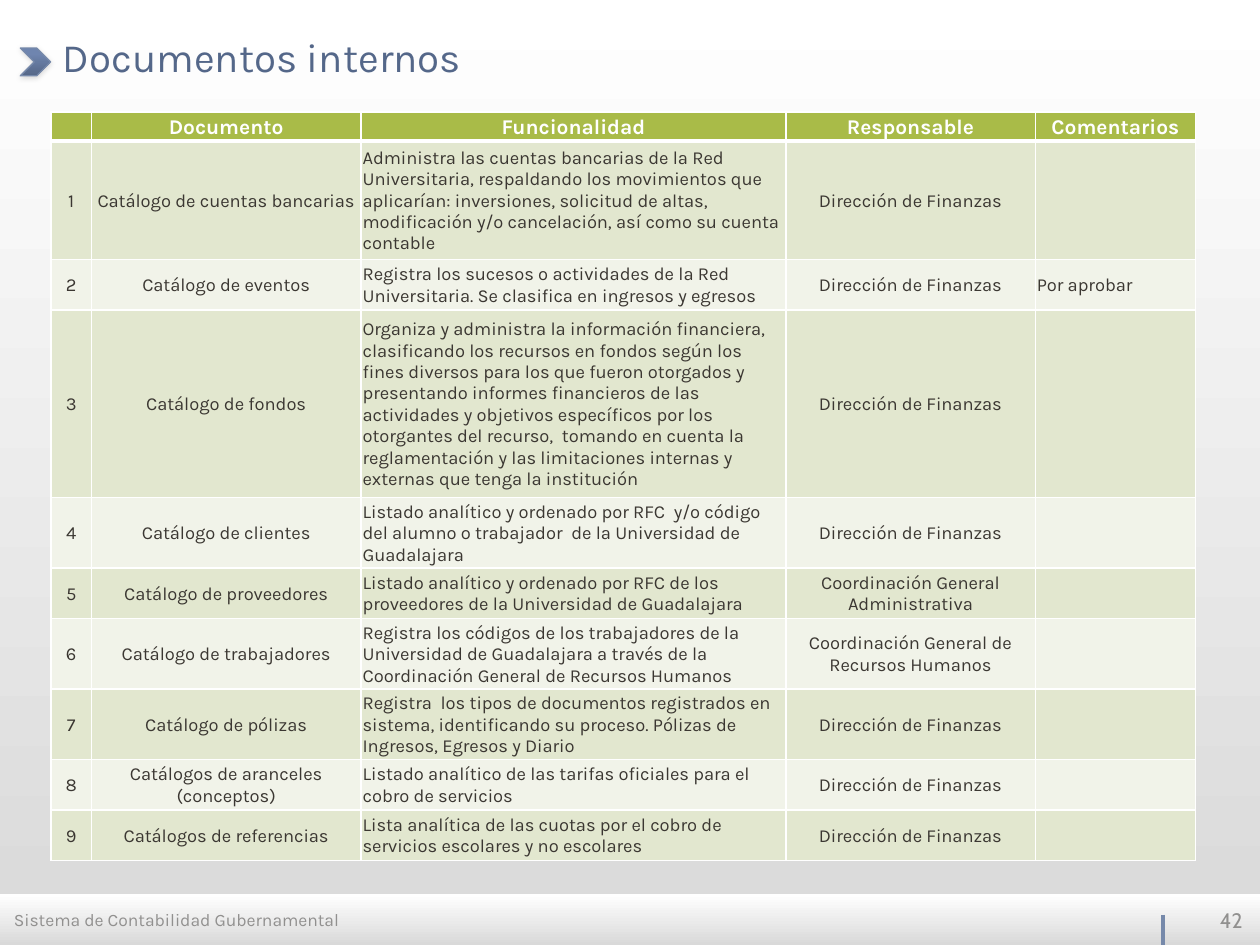
from lxml.etree import SubElement
from pptx import Presentation
from pptx.dml.color import RGBColor
from pptx.enum.shapes import MSO_CONNECTOR, MSO_SHAPE
from pptx.enum.text import MSO_ANCHOR, PP_ALIGN
from pptx.oxml.ns import qn
from pptx.util import Cm, Pt

WHITE = RGBColor(0xFF, 0xFF, 0xFF)
SILVER = RGBColor(0xD9, 0xD9, 0xD9)
GRAY = RGBColor(0x91, 0x90, 0x8F)
TITLE_BLUE = RGBColor(0x54, 0x67, 0x89)
LINE_BLUE = RGBColor(0x76, 0x89, 0xAA)
DARK_BLUE = RGBColor(0x55, 0x67, 0x87)
LIGHT_BLUE = RGBColor(0x6F, 0x85, 0xAF)
GREEN = RGBColor(0xA9, 0xBB, 0x48)
BANDS = [RGBColor(0xE2, 0xE7, 0xCF), RGBColor(0xF1, 0xF3, 0xE9)]
INK = RGBColor(0x3B, 0x37, 0x32)

FONT = "Karla"
FINANZAS = "Dirección de Finanzas"
HEADER = ["", "Documento", "Funcionalidad", "Responsable", "Comentarios"]
COL_WIDTHS = [0.81, 5.44, 8.56, 5.03, 3.23]
HEADER_HEIGHT = 0.58
DOCUMENTS = [
    (2.39, "Catálogo de cuentas bancarias",
     "Administra las cuentas bancarias de la Red Universitaria, respaldando los "
     "movimientos que aplicarían: inversiones, solicitud de altas, modificación "
     "y/o cancelación, así como su cuenta contable", FINANZAS, ""),
    (1.02, "Catálogo de eventos",
     "Registra los sucesos o actividades de la Red Universitaria. Se clasifica en "
     "ingresos y egresos", FINANZAS, "Por aprobar"),
    (3.78, "Catálogo de fondos",
     "Organiza y administra la información financiera, clasificando los recursos "
     "en fondos según los fines diversos para los que fueron otorgados y "
     "presentando informes financieros de las actividades y objetivos específicos "
     "por los otorgantes del recurso,  tomando en cuenta la reglamentación y las "
     "limitaciones internas y externas que tenga la institución", FINANZAS, ""),
    (1.42, "Catálogo de clientes",
     "Listado analítico y ordenado por RFC  y/o código del alumno o trabajador  de "
     "la Universidad de Guadalajara", FINANZAS, ""),
    (1.02, "Catálogo de proveedores",
     "Listado analítico y ordenado por RFC de los proveedores de la Universidad de "
     "Guadalajara", "Coordinación General Administrativa", ""),
    (1.42, "Catálogo de trabajadores",
     "Registra los códigos de los trabajadores de la Universidad de Guadalajara a "
     "través de la Coordinación General de Recursos Humanos",
     "Coordinación General de Recursos Humanos", ""),
    (1.42, "Catálogo de pólizas",
     "Registra  los tipos de documentos registrados en sistema, identificando su "
     "proceso. Pólizas de Ingresos, Egresos y Diario", FINANZAS, ""),
    (1.02, "Catálogos de aranceles (conceptos)",
     "Listado analítico de las tarifas oficiales para el cobro de servicios",
     FINANZAS, ""),
    (1.02, "Catálogos de referencias",
     "Lista analítica de las cuotas por el cobro de servicios escolares y no "
     "escolares", FINANZAS, ""),
]


def set_gradient(fill, start, end, angle, end_position=1.0):
    fill.gradient()
    fill.gradient_angle = angle
    first, last = fill.gradient_stops
    first.color.rgb, first.position = start, 0
    last.color.rgb, last.position = end, end_position


def add_run(p, text, size, color, font=FONT, bold=False):
    r = p.add_run()
    r.text = text
    r.font.name = font
    r.font.size = Pt(size)
    r.font.bold = bold
    r.font.color.rgb = color


def add_text(s, box, text, size, color, font=FONT,
             align=PP_ALIGN.LEFT, anchor=MSO_ANCHOR.MIDDLE):
    tf = s.shapes.add_textbox(*map(Cm, box)).text_frame
    tf.word_wrap = True
    tf.vertical_anchor = anchor
    p = tf.paragraphs[0]
    p.alignment = align
    add_run(p, text, size, color, font)


def add_footer_bar(s):
    sp = s.shapes.add_shape(MSO_SHAPE.RECTANGLE, Cm(0), Cm(18.03), Cm(25.4), Cm(1.02))
    sp.shadow.inherit = False
    sp.line.fill.background()
    set_gradient(sp.fill, WHITE, SILVER, 270)


def add_footer_mark(s):
    line = s.shapes.add_connector(MSO_CONNECTOR.STRAIGHT, Cm(23.44), Cm(18.44),
                                  Cm(23.44), Cm(19.66))
    line.line.color.rgb = LINE_BLUE
    line.line.width = Pt(2.25)
    SubElement(line._element.spPr, qn("a:effectLst"))


def add_chevron(s):
    sp = s.shapes.add_shape(MSO_SHAPE.CHEVRON, Cm(0.41), Cm(0.97), Cm(0.61), Cm(0.56))
    sp.shadow.inherit = False
    set_gradient(sp.fill, DARK_BLUE, LIGHT_BLUE, 90, 0.8)
    sp.line.color.rgb = LINE_BLUE
    sp.line.width = Pt(0.75)
    effects = sp._element.spPr.find(qn("a:effectLst"))
    shadow = SubElement(effects, qn("a:outerShdw"), blurRad=str(Pt(3.1)),
                        dist=str(Pt(0.8)), dir="5400000", rotWithShape="0")
    color = SubElement(shadow, qn("a:srgbClr"), val="000000")
    SubElement(color, qn("a:alpha"), val="15000")


def set_borders(cell, bottom):
    tcPr = cell._tc.get_or_add_tcPr()
    for side, width in (("L", 1), ("R", 1), ("T", 1), ("B", bottom)):
        ln = SubElement(tcPr, qn(f"a:ln{side}"), w=str(Pt(width)))
        fill = SubElement(ln, qn("a:solidFill"))
        SubElement(fill, qn("a:srgbClr"), val=str(WHITE))


def fill_cell(cell, text, align, fill, size, color, bold=False, bottom=1):
    set_borders(cell, bottom)
    cell.fill.solid()
    cell.fill.fore_color.rgb = fill
    cell.margin_left = cell.margin_right = cell.margin_top = Cm(0.03)
    cell.margin_bottom = Cm(0)
    cell.vertical_anchor = MSO_ANCHOR.MIDDLE
    p = cell.text_frame.paragraphs[0]
    p.alignment = align
    if text:
        add_run(p, text, size, color, bold=bold)
    else:
        SubElement(p._p, qn("a:endParaRPr"), sz=str(int(size * 100)))


def add_documents_table(s):
    heights = [HEADER_HEIGHT] + [row[0] for row in DOCUMENTS]
    table = s.shapes.add_table(len(heights), len(HEADER), Cm(1.03), Cm(2.26),
                               Cm(sum(COL_WIDTHS)), Cm(sum(heights))).table
    for column, width in zip(table.columns, COL_WIDTHS):
        column.width = Cm(width)
    for row, height in zip(table.rows, heights):
        row.height = Cm(height)
    for c, title in enumerate(HEADER):
        fill_cell(table.cell(0, c), title, PP_ALIGN.CENTER, GREEN, 12, WHITE,
                  bold=True, bottom=3)
    for number, (_, *texts) in enumerate(DOCUMENTS, 1):
        for c, text in enumerate([str(number), *texts]):
            align = PP_ALIGN.LEFT if c in (2, 4) else PP_ALIGN.CENTER
            fill_cell(table.cell(number, c), text, align,
                      BANDS[(number - 1) % 2], 10.5, INK)


def main():
    prs = Presentation()
    prs.slide_width, prs.slide_height = Cm(25.4), Cm(19.05)
    s = prs.slides.add_slide(prs.slide_layouts[6])
    set_gradient(s.background.fill, SILVER, WHITE, 90)
    add_footer_bar(s)
    add_footer_mark(s)
    add_chevron(s)
    add_text(s, (23.47, 18.06, 1.83, 0.99), "42", 12, GRAY, "Cabin", PP_ALIGN.RIGHT)
    add_text(s, (0.03, 18.03, 16.05, 1.02), "Sistema de Contabilidad Gubernamental",
             10, GRAY)
    add_text(s, (1.02, 0.53, 23.09, 1.6), "Documentos internos", 23, TITLE_BLUE,
             anchor=MSO_ANCHOR.TOP)
    add_documents_table(s)
    prs.save("out.pptx")


if __name__ == "__main__":
    main()
